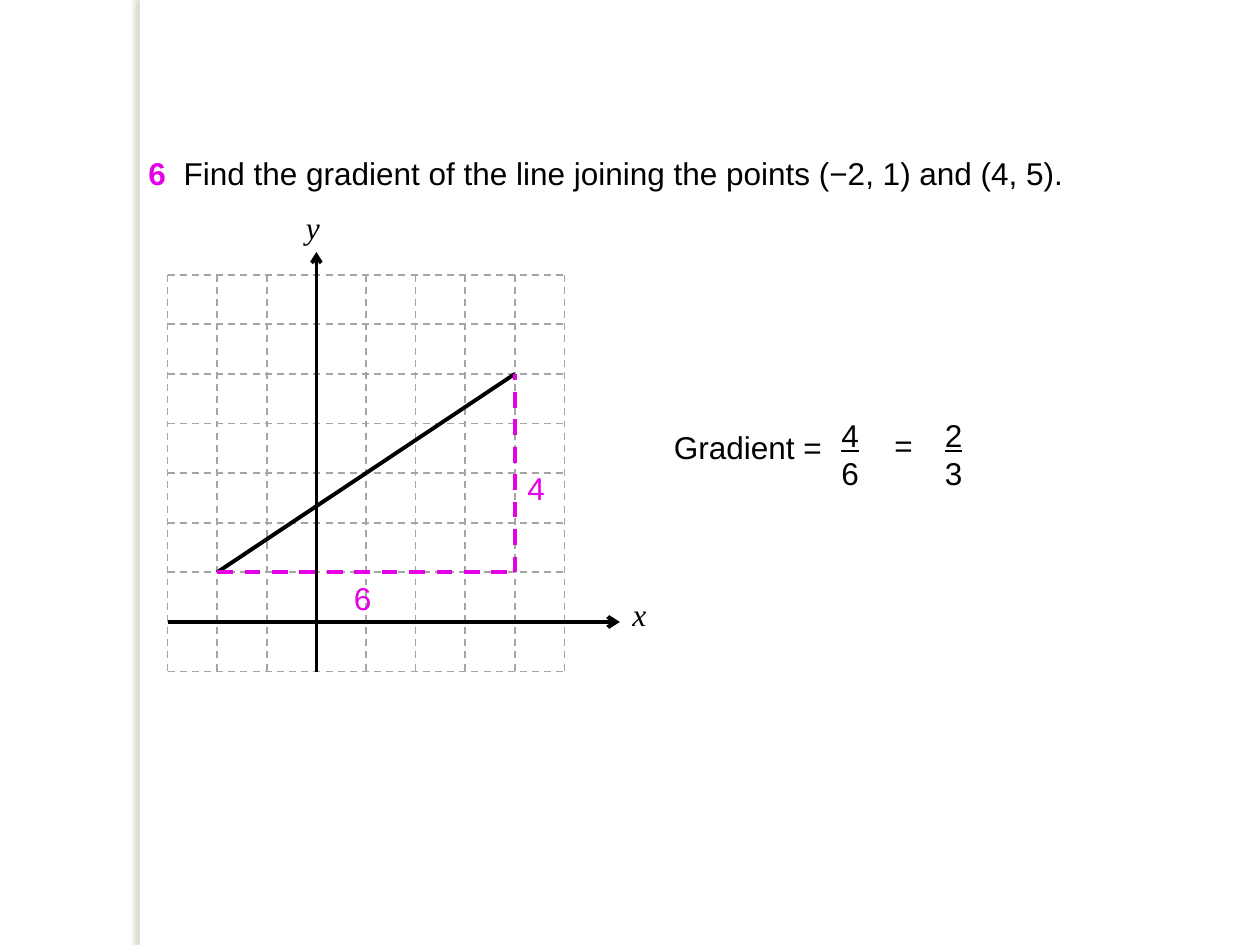
from lxml import etree
from pptx import Presentation
from pptx.dml.color import RGBColor
from pptx.enum.dml import MSO_LINE
from pptx.enum.shapes import MSO_CONNECTOR, MSO_SHAPE
from pptx.oxml import parse_xml
from pptx.oxml.ns import nsdecls, qn
from pptx.util import Inches, Pt

STRAIGHT = MSO_CONNECTOR.STRAIGHT
RECTANGLE = MSO_SHAPE.RECTANGLE
DASH = MSO_LINE.DASH
COLOURS = {"black": "000000", "white": "FFFFFF", "grid": "A5A5A5",
           "accent": "E500E5", "shadow": "657B39"}
GRID_CELLS = 8
X_MIN, Y_MAX = -3, 7


def colour(name):
    return RGBColor.from_string(COLOURS[name])


def add_line(shapes, start, end, ink="black", width=2.25, dash=None, arrow=False):
    line = shapes.add_connector(STRAIGHT, *(Inches(v) for v in (*start, *end)))
    line.line.color.rgb = colour(ink)
    line.line.width = Pt(width)
    if dash:
        line.line.dash_style = dash
    if arrow:
        etree.SubElement(line.line._get_or_add_ln(), qn("a:tailEnd"), type="arrow")
    etree.SubElement(line._element.spPr, qn("a:effectLst"))
    return line


def add_span(para, text, ink="black", font="Arial", bold=False, italic=False,
             underline=False):
    span = para.add_run()
    span.text = text
    span.font.size = Pt(18)
    span.font.name = font
    span.font.color.rgb = colour(ink)
    span.font.bold = bold
    span.font.italic = italic
    span.font.underline = underline


def add_text_box(page, left, top, width, height=0.4):
    box = page.shapes.add_textbox(*(Inches(v) for v in (left, top, width, height)))
    box.text_frame.word_wrap = True
    return box.text_frame


def add_label(page, left, top, width, text, **style):
    frame = add_text_box(page, left, top, width)
    add_span(frame.paragraphs[0], text, **style)


def add_side_band(page, left, top, width, height):
    band = page.shapes.add_shape(
        RECTANGLE, *(Inches(v) for v in (left, top, width, height)))
    band.fill.solid()
    band.fill.fore_color.rgb = colour("white")
    band.line.fill.background()
    # Soft shadow falling to the left
    band._element.spPr.append(parse_xml(
        f'<a:effectLst {nsdecls("a")}>'
        f'<a:outerShdw blurRad="{Pt(3)}" dist="{Pt(3)}" dir="10800000" rotWithShape="0">'
        f'<a:srgbClr val="{COLOURS["shadow"]}"><a:alpha val="25000"/></a:srgbClr>'
        '</a:outerShdw></a:effectLst>'))


def add_question(page, left, top, width, number, text):
    para = add_text_box(page, left, top, width).paragraphs[0]
    # Hanging indent sets the gap after the number
    properties = para._p.get_or_add_pPr()
    properties.set("marL", str(Inches(0.28)))
    properties.set("indent", str(-Inches(0.28)))
    add_span(para, number, ink="accent", bold=True)
    add_span(para, "\t" + text)


def add_graph(page, left, top, size):
    cell = size / GRID_CELLS
    right, bottom = left + size, top + size

    def point(x, y):
        return left + (x - X_MIN) * cell, top + (Y_MAX - y) * cell

    # Grid
    grid = page.shapes.add_group_shape().shapes
    for index in range(GRID_CELLS + 1):
        x = left + index * cell
        add_line(grid, (x, top), (x, bottom), "grid", 1, DASH)
    for index in range(GRID_CELLS + 1):
        y = top + index * cell
        add_line(grid, (left, y), (right, y), "grid", 1, DASH)

    # Line segment with its run and rise
    start, end, corner = point(-2, 1), point(4, 5), point(4, 1)
    add_line(page.shapes, start, end)
    add_line(page.shapes, start, corner, "accent", dash=DASH)
    add_line(page.shapes, corner, end, "accent", dash=DASH)
    add_label(page, left + 1.38, corner[1], 0.39, "6", ink="accent")
    add_label(page, corner[0], top + 1.49, 0.42, "4", ink="accent")

    # Axes
    origin_x, origin_y = point(0, 0)
    add_line(page.shapes, (left, origin_y), (right + 0.44, origin_y), arrow=True)
    add_line(page.shapes, (origin_x, bottom), (origin_x, top - 0.18), width=2, arrow=True)
    add_label(page, left + 1, top - 0.58, 0.91, "y", font="Times New Roman", italic=True)
    add_label(page, right + 0.44, top + 2.49, 0.58, "x", font="Times New Roman", italic=True)


def add_fraction(page, left, top, upper, lower):
    frame = add_text_box(page, left, top, 0.4, 0.71)
    add_span(frame.paragraphs[0], upper, underline=True)
    add_span(frame.add_paragraph(), lower)


def add_answer(page, left, top):
    add_label(page, left, top + 0.1, 1.5, "Gradient =")
    add_fraction(page, left + 1.33, top, "4", "6")
    add_label(page, left + 1.75, top + 0.08, 0.35, "=")
    add_fraction(page, left + 2.15, top, "2", "3")


def main():
    deck = Presentation()
    deck.slide_width, deck.slide_height = Inches(10), Inches(7.5)
    page = deck.slides.add_slide(deck.slide_layouts[6])
    add_side_band(page, 1.11, 0, 0.08, 7.5)
    add_question(page, 1.08, 1.17, 7.84, "6",
                 "Find the gradient of the line joining the points (−2, 1) and (4, 5).")
    add_graph(page, 1.33, 2.18, 3.15)
    add_answer(page, 5.25, 3.25)
    deck.save("out.pptx")


if __name__ == "__main__":
    main()
